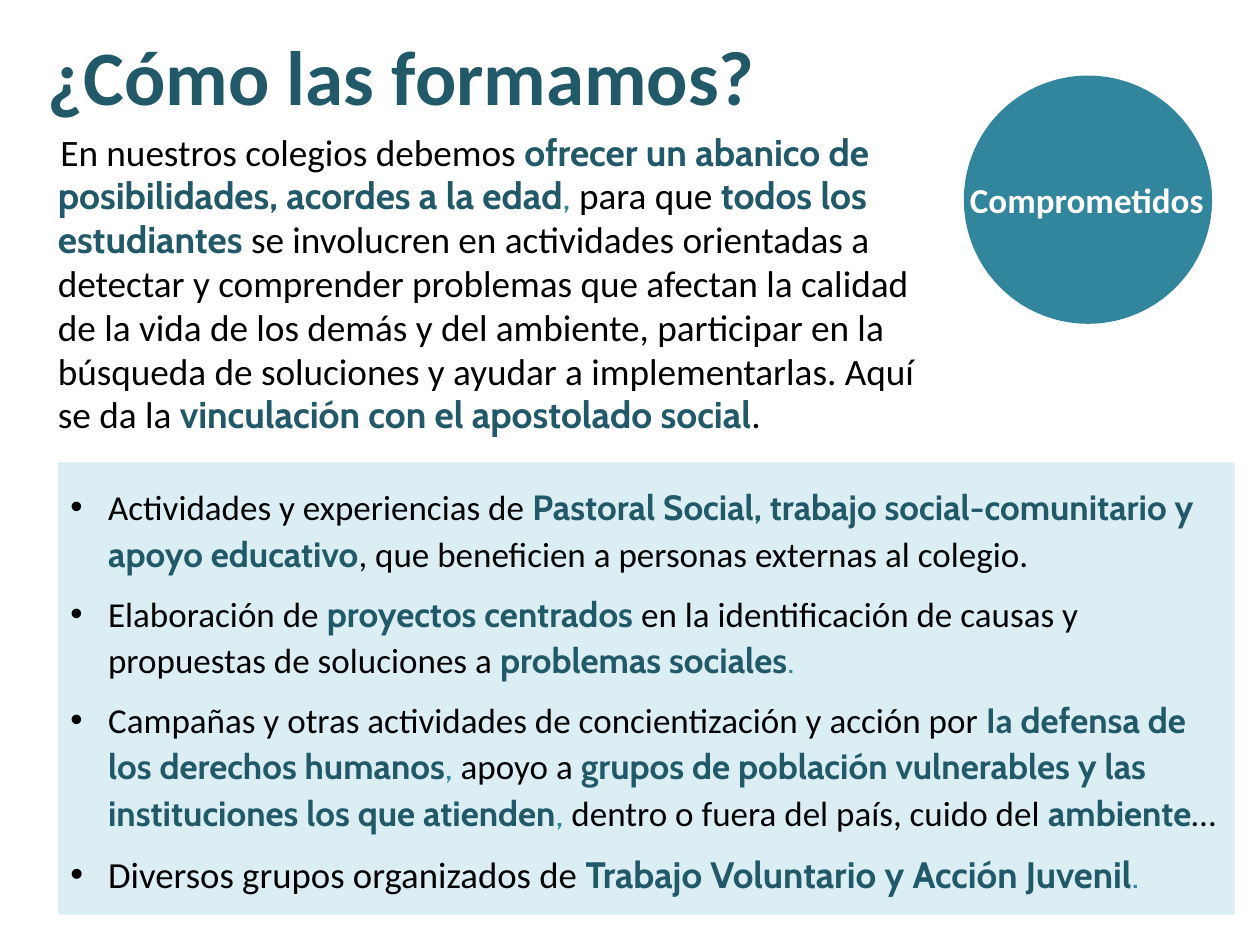
from lxml import etree
from pptx import Presentation
from pptx import util as u
from pptx.dml.color import RGBColor
from pptx.enum import shapes, text
from pptx.oxml.ns import qn

DARK = RGBColor(0x21, 0x59, 0x68)
TEAL = RGBColor(0x31, 0x85, 0x9C)
PALE = RGBColor(0xDB, 0xEE, 0xF4)
BLACK = RGBColor(0, 0, 0)
WHITE = RGBColor(0xFF, 0xFF, 0xFF)
BASE, HEAVY = "Calibri", "Cabin"

PLAIN = dict(font=BASE, color=BLACK)
KEY = dict(font=HEAVY, color=DARK, bold=True)
SOFT = dict(font=HEAVY, color=TEAL)
HEAD = dict(font=BASE, color=DARK, bold=True)

INTRO = [
    ("En nuestros colegios debemos ", PLAIN),
    ("ofrecer un abanico de posibilidades, acordes a la edad", KEY),
    (", ", SOFT),
    ("para que ", PLAIN),
    ("todos los estudiantes ", KEY),
    ("se involucren en actividades orientadas a detectar y comprender "
     "problemas que afectan la calidad de la vida de los demás y del "
     "ambiente, participar en la búsqueda de soluciones y ayudar a "
     "implementarlas. Aquí se da la ", PLAIN),
    ("vinculación con el apostolado social", KEY),
    (".", PLAIN),
]

ITEMS = [
    (20, [
        ("Actividades y experiencias de ", PLAIN),
        ("Pastoral Social, trabajo social-comunitario y apoyo educativo", KEY),
        (", que beneficien a personas externas al colegio.", PLAIN),
    ]),
    (20, [
        ("Elaboración de ", PLAIN),
        ("proyectos centrados ", KEY),
        ("en la identificación de causas y propuestas de soluciones a ", PLAIN),
        ("problemas sociales", KEY),
        (".", SOFT),
    ]),
    (20, [
        ("Campañas y otras actividades de concientización y acción por ", PLAIN),
        ("la ", HEAD),
        ("defensa de los derechos humanos", KEY),
        (", ", SOFT),
        ("apoyo a ", PLAIN),
        ("grupos de población vulnerables y las instituciones los que "
         "atienden", KEY),
        (", ", SOFT),
        ("dentro o fuera del país, cuido del ", PLAIN),
        ("ambiente", KEY),
        ("…", PLAIN),
    ]),
    (21, [
        ("Diversos grupos organizados de ", PLAIN),
        ("Trabajo Voluntario y Acción Juvenil", KEY),
        (".", SOFT),
    ]),
]


def put(par, words, font=BASE, size=20, color=BLACK, bold=False):
    run = par.add_run()
    run.text = words
    run.font.name = font
    run.font.size = u.Pt(size)
    run.font.color.rgb = color
    run.font.bold = bold


def indent(par, left, first, mark=None):
    props = par._p.get_or_add_pPr()
    props.set("marL", str(u.Inches(left)))
    props.set("indent", str(u.Inches(first)))
    if mark:
        face = etree.SubElement(props, qn("a:buFont"))
        face.set("typeface", "Arial")
        etree.SubElement(props, qn("a:buChar")).set("char", mark)
    else:
        etree.SubElement(props, qn("a:buNone"))


class Deck:
    COLS, ROWS = 100, 75

    def __init__(self):
        self.prs = Presentation()
        self.prs.slide_width = u.Inches(10)
        self.prs.slide_height = u.Inches(7.5)
        self.slide = self.prs.slides.add_slide(self.prs.slide_layouts[1])

    def cells(self, left, top, wide, high):
        col = self.prs.slide_width / self.COLS
        row = self.prs.slide_height / self.ROWS
        return [round(n) for n in (left * col, top * row, wide * col, high * row)]

    def place(self, item, box):
        item.left, item.top, item.width, item.height = self.cells(*box)
        item.text_frame.auto_size = text.MSO_AUTO_SIZE.NONE
        return item.text_frame

    def title(self, words, box):
        frame = self.place(self.slide.shapes.title, box)
        frame.vertical_anchor = text.MSO_ANCHOR.MIDDLE
        par = frame.paragraphs[0]
        par.alignment = text.PP_ALIGN.LEFT
        put(par, words, size=44, **HEAD)

    def body(self, runs, box):
        frame = self.place(self.slide.placeholders[1], box)
        par = frame.paragraphs[0]
        par.space_before = u.Pt(6)
        par.line_spacing = 0.98
        indent(par, 0, 0.02)
        for words, style in runs:
            put(par, words, size=21.3, **style)

    def shape(self, kind, box, fill):
        item = self.slide.shapes.add_shape(kind, *self.cells(*box))
        item.shadow.inherit = False
        item.fill.solid()
        item.fill.fore_color.rgb = fill
        item.line.fill.background()
        return item

    def label(self, words, box):
        frame = self.slide.shapes.add_textbox(*self.cells(*box)).text_frame
        frame.word_wrap = False
        frame.auto_size = text.MSO_AUTO_SIZE.SHAPE_TO_FIT_TEXT
        put(frame.paragraphs[0], words, color=WHITE, bold=True)

    def panel(self, items, box):
        frame = self.shape(shapes.MSO_SHAPE.RECTANGLE, box, PALE).text_frame
        frame.word_wrap = True
        frame.vertical_anchor = text.MSO_ANCHOR.MIDDLE
        for n, (size, runs) in enumerate(items):
            par = frame.add_paragraph() if n else frame.paragraphs[0]
            par.alignment = text.PP_ALIGN.LEFT
            par.line_spacing = 1.1
            par.space_before = par.space_after = u.Pt(4)
            indent(par, 0.3, -0.3, "•")
            for words, style in runs:
                put(par, words, size=size, **style)


def main():
    deck = Deck()
    deck.title("¿Cómo las formamos?", (2.8, -0.3, 60.6, 12.5))
    deck.body(INTRO, (3.6, 9.9, 72.9, 26.8))
    deck.shape(shapes.MSO_SHAPE.OVAL, (76.5, 6, 19.7, 19.7), TEAL)
    deck.label("Comprometidos", (76, 13.7, 20.7, 4.4))
    deck.panel(ITEMS, (4.6, 36.7, 93.4, 35.9))
    deck.prs.save("out.pptx")


if __name__ == "__main__":
    main()
